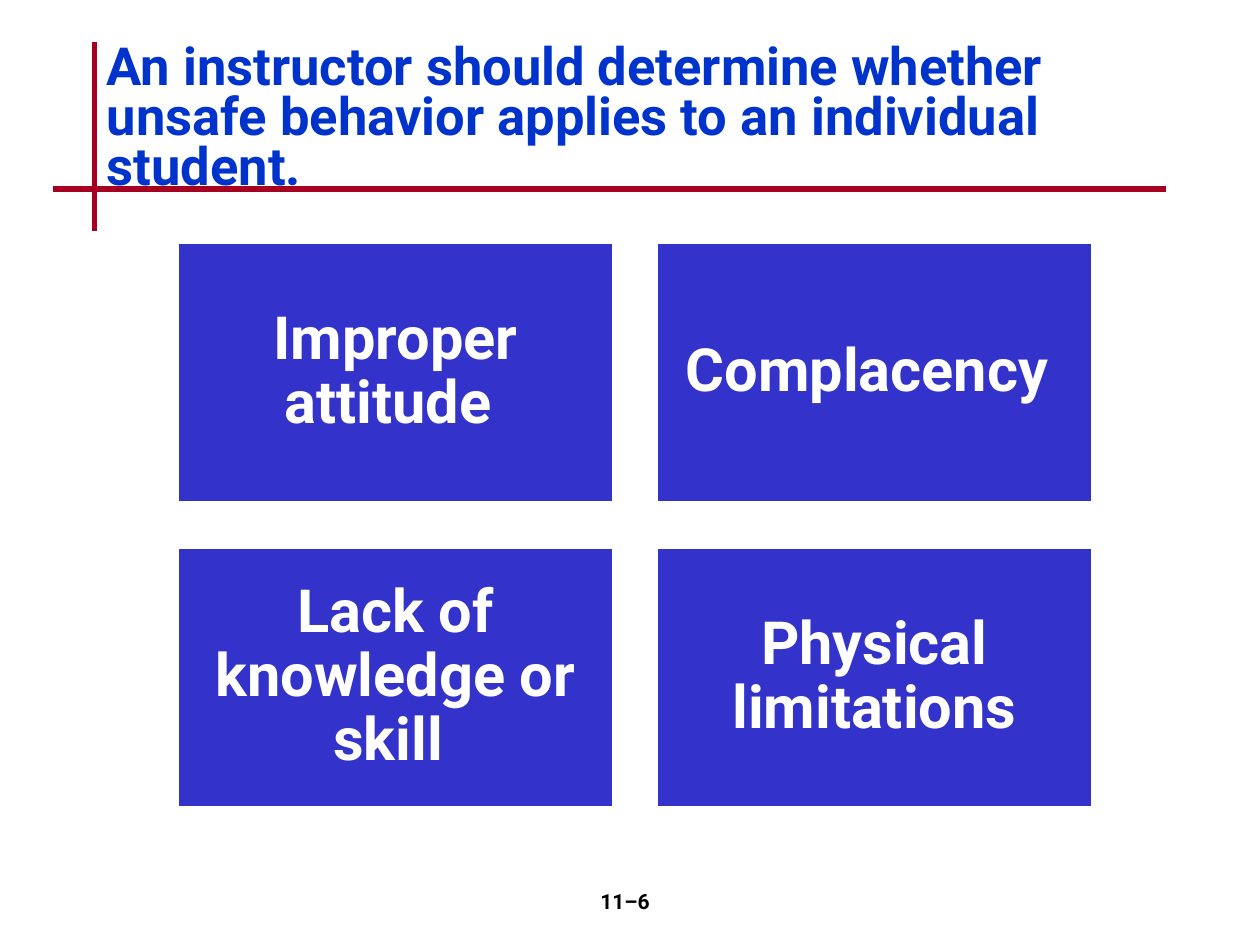
"""Build the slide on causes of unsafe behavior in an individual student."""
from pptx import Presentation
from pptx.dml.color import RGBColor
from pptx.enum.shapes import MSO_CONNECTOR, MSO_SHAPE
from pptx.enum.text import MSO_ANCHOR, PP_ALIGN
from pptx.oxml.ns import qn
from pptx.util import Inches, Pt
from lxml.etree import SubElement

COLORS = {"title": "0033CC", "rule": "A50021", "card": "3333CC",
          "white": "FFFFFF", "black": "000000"}


def color(name):
    return RGBColor.from_string(COLORS[name])


def write(sp, text, size, name, align, anchor, spacing=1.0):
    tf = sp.text_frame
    tf.word_wrap = True
    tf.vertical_anchor = anchor
    p = tf.paragraphs[0]
    p.text = text
    p.alignment = align
    p.line_spacing = spacing
    p.font.name = "Roboto"
    p.font.size = Pt(size)
    p.font.bold = True
    p.font.color.rgb = color(name)
    return tf


prs = Presentation()
prs.slide_width = Inches(10)
prs.slide_height = Inches(7.5)
s = prs.slides.add_slide(prs.slide_layouts[6])

for x1, y1, x2, y2 in [(0.75, 0.33, 0.75, 1.83), (0.42, 1.5, 9.25, 1.5)]:
    rule = s.shapes.add_connector(MSO_CONNECTOR.STRAIGHT, Inches(x1), Inches(y1),
                                  Inches(x2), Inches(y2))
    rule.line.color.rgb = color("rule")
    rule.line.width = Pt(3)
    SubElement(rule.line._get_or_add_ln().getparent(), qn("a:effectLst"))

causes = ["Improper attitude ", "Complacency ",
          "Lack of knowledge or skill ", "Physical limitations"]
for i, cause in enumerate(causes):
    row, col = divmod(i, 2)
    sp = s.shapes.add_shape(MSO_SHAPE.RECTANGLE, Inches(1.41 + 3.8 * col),
                            Inches(1.92 + 2.42 * row), Inches(3.46), Inches(2.07))
    sp.shadow.inherit = False
    sp.fill.solid()
    sp.fill.fore_color.rgb = color("card")
    sp.line.color.rgb = color("white")
    sp.line.width = Pt(2)
    tf = write(sp, cause, 34, "white", PP_ALIGN.CENTER, MSO_ANCHOR.MIDDLE, 0.9)
    tf.margin_left = tf.margin_right = Inches(0.14)
    tf.margin_top = tf.margin_bottom = Inches(0.14)

title = s.shapes.add_textbox(Inches(0.75), Inches(0.33), Inches(8.5), Inches(1.25))
write(title, "An instructor should determine whether unsafe behavior applies "
      "to an individual student.", 30, "title", PP_ALIGN.LEFT, MSO_ANCHOR.MIDDLE, 0.8)

number = s.shapes.add_textbox(Inches(3.92), Inches(7), Inches(2.08), Inches(0.5))
write(number, "11–6", 12, "black", PP_ALIGN.CENTER, MSO_ANCHOR.TOP)

prs.save("out.pptx")
